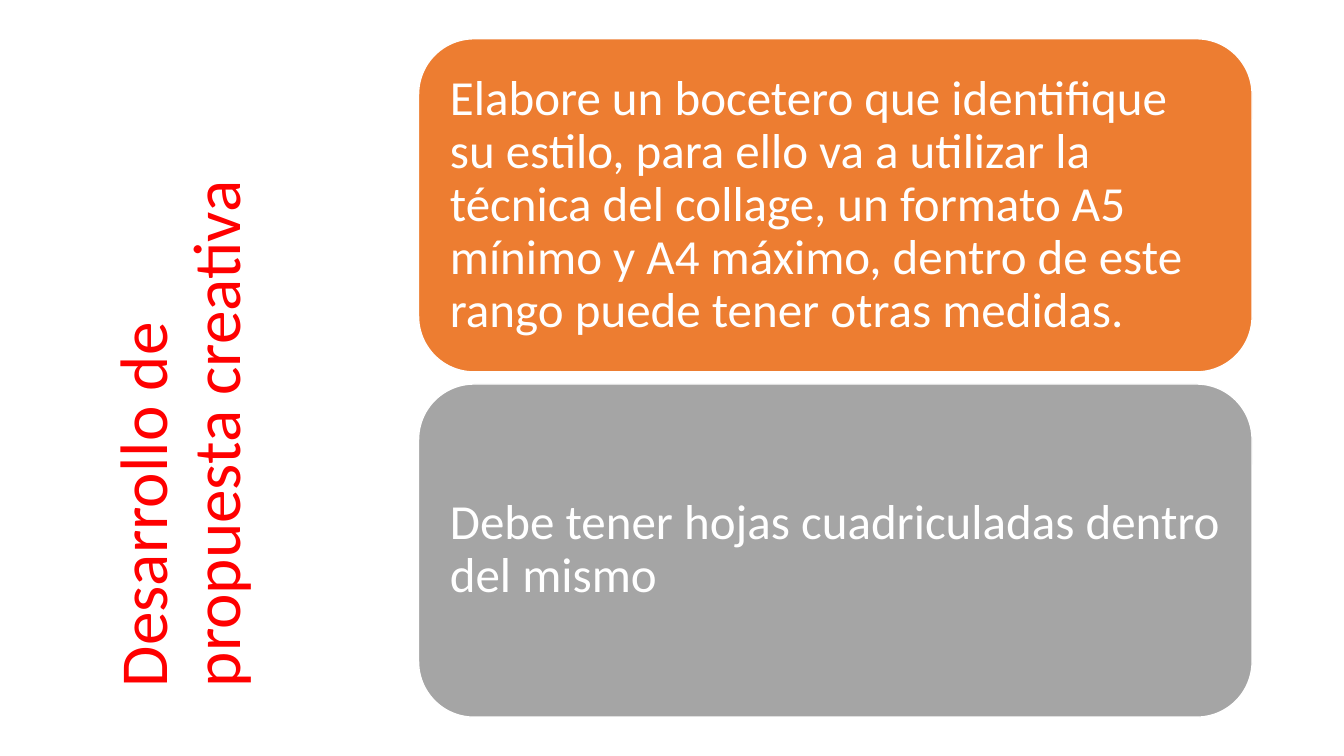
from pptx import Presentation
from pptx.dml.color import RGBColor
from pptx.enum import shapes, text
from pptx.util import Pt

RED = RGBColor(0xFF, 0x00, 0x00)
ORANGE = RGBColor(0xED, 0x7D, 0x31)
GRAY = RGBColor(0xA5, 0xA5, 0xA5)
WHITE = RGBColor(0xFF, 0xFF, 0xFF)

CARDS = [
    ("Elabore un bocetero que identifique su estilo, para ello va a utilizar "
     "la técnica del collage, un formato A5 mínimo y A4 máximo, dentro de este "
     "rango puede tener otras medidas.", ORANGE),
    ("Debe tener hojas cuadriculadas dentro del mismo", GRAY),
]
LEFT, TOP, WIDTH, HEIGHT, GAP = 299, 27.7, 595.4, 238, 8.6
INSET = 10.8


def write(frame, words, size, color):
    frame.text = words
    frame.word_wrap = True
    frame.vertical_anchor = text.MSO_ANCHOR.MIDDLE
    para = frame.paragraphs[0]
    para.alignment = text.PP_ALIGN.LEFT
    para.line_spacing = 0.9
    font = para.runs[0].font
    font.name = "Calibri"
    font.size = Pt(size)
    font.color.rgb = color


deck = Presentation()
deck.slide_width = Pt(960)
deck.slide_height = Pt(540)
slide = deck.slides.add_slide(deck.slide_layouts[6])

title = slide.shapes.add_textbox(Pt(-104.4), Pt(153.4), Pt(469.4), Pt(219.6))
title.rotation = 270
write(title.text_frame, "Desarrollo de propuesta creativa", 48, RED)

for row, (words, fill) in enumerate(CARDS):
    card = slide.shapes.add_shape(
        shapes.MSO_SHAPE.ROUNDED_RECTANGLE,
        Pt(LEFT), Pt(TOP + row * (HEIGHT + GAP)), Pt(WIDTH), Pt(HEIGHT))
    card.shadow.inherit = False
    card.fill.solid()
    card.fill.fore_color.rgb = fill
    card.line.color.rgb = WHITE
    card.line.width = Pt(1)
    frame = card.text_frame
    frame.margin_left = frame.margin_right = Pt(INSET)
    frame.margin_top = frame.margin_bottom = Pt(INSET)
    write(frame, words, 35, WHITE)

deck.save("out.pptx")
